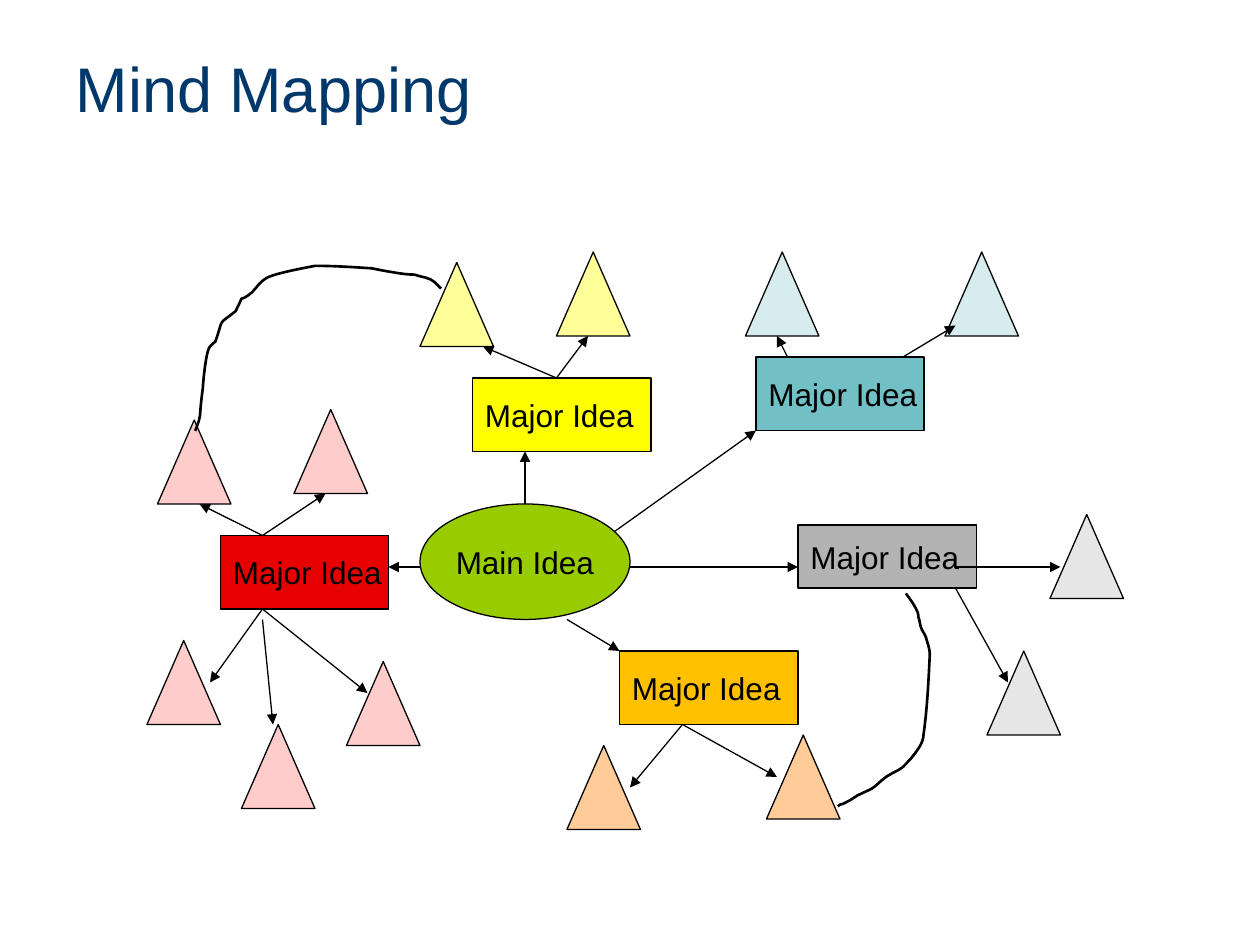
from lxml.etree import SubElement
from pptx import Presentation
from pptx.dml.color import RGBColor
from pptx.enum.shapes import MSO_CONNECTOR, MSO_SHAPE
from pptx.enum.text import MSO_ANCHOR, PP_ALIGN
from pptx.oxml.ns import qn
from pptx.util import Inches, Pt

NAVY = RGBColor(0x00, 0x38, 0x6B)
BLACK = RGBColor(0x00, 0x00, 0x00)
GREEN = RGBColor(0x99, 0xCC, 0x00)
TEAL, PALE_TEAL = RGBColor(0x72, 0xBF, 0xC5), RGBColor(0xD6, 0xEC, 0xEE)
GRAY, PALE_GRAY = RGBColor(0xB3, 0xB3, 0xB3), RGBColor(0xE6, 0xE6, 0xE6)
YELLOW, PALE_YELLOW = RGBColor(0xFF, 0xFF, 0x00), RGBColor(0xFF, 0xFF, 0x99)
RED, PINK = RGBColor(0xE6, 0x00, 0x00), RGBColor(0xFF, 0xCC, 0xCC)
ORANGE, PEACH = RGBColor(0xFF, 0xC0, 0x00), RGBColor(0xFF, 0xCC, 0x99)

# Content: each major idea with its triangles and arrows (from x, y, to x, y)
TITLE = "Mind Mapping"
MAIN_IDEA = ("Main Idea", (3.33, 4, 1.67, 0.92))
TRIANGLE_SIZE = (0.58, 0.67)
MAJOR_IDEAS = [
    {"text": "Major Idea", "area": (6, 2.83, 1.33, 0.58), "fill": TEAL, "pale": PALE_TEAL,
     "triangles": [(5.92, 2), (7.5, 2)],
     "from_main": (4.83, 4.25, 6, 3.42),
     "arrows": [(7.17, 2.83, 7.58, 2.57), (6.25, 2.83, 6.17, 2.67)]},
    {"text": "Major Idea", "area": (6.33, 4.17, 1.42, 0.5), "fill": GRAY, "pale": PALE_GRAY,
     "triangles": [(7.83, 5.17), (8.33, 4.08)],
     "from_main": (5, 4.5, 6.33, 4.5),
     "arrows": [(7.58, 4.5, 8.42, 4.5), (7.58, 4.67, 8, 5.42)]},
    {"text": "Major Idea", "area": (3.75, 3, 1.42, 0.58), "fill": YELLOW, "pale": PALE_YELLOW,
     "triangles": [(4.42, 2), (3.33, 2.08)],
     "from_main": (4.17, 4, 4.17, 3.58),
     "arrows": [(4.42, 3, 4.67, 2.67), (4.42, 3, 3.83, 2.75)]},
    {"text": "Major Idea", "area": (1.75, 4.25, 1.33, 0.58), "fill": RED, "pale": PINK,
     "triangles": [(2.75, 5.25), (1.92, 5.75), (2.33, 3.25), (1.25, 3.33), (1.17, 5.08)],
     "from_main": (3.33, 4.5, 3.08, 4.5),
     "arrows": [(2.08, 4.25, 1.58, 4), (2.08, 4.25, 2.58, 3.92), (2.08, 4.83, 1.67, 5.42),
                (2.08, 4.83, 2.92, 5.5), (2.08, 4.92, 2.17, 5.75)]},
    {"text": "Major Idea", "area": (4.92, 5.17, 1.42, 0.58), "fill": ORANGE, "pale": PEACH,
     "triangles": [(4.5, 5.92), (6.08, 5.83)],
     "from_main": (4.5, 4.92, 4.92, 5.17),
     "arrows": [(5.42, 5.75, 5, 6.25), (5.42, 5.75, 6.17, 6.17)]},
]

# Hand-drawn links: a start, then three points for each curve; a last single point is a line
LINKS = [
    [(7.19, 4.71),
     (7.22, 4.75), (7.25, 4.79), (7.27, 4.83), (7.28, 4.85), (7.29, 4.87), (7.29, 4.9),
     (7.3, 4.92), (7.3, 4.95), (7.31, 4.98), (7.32, 5.01), (7.34, 5.03), (7.35, 5.06),
     (7.36, 5.1), (7.38, 5.15), (7.38, 5.19), (7.37, 5.4), (7.36, 5.62), (7.33, 5.83),
     (7.33, 5.9), (7.27, 5.97), (7.23, 6.02), (7.2, 6.05), (7.18, 6.08), (7.15, 6.1),
     (7.12, 6.12), (7.09, 6.13), (7.06, 6.15), (7, 6.18), (6.96, 6.24), (6.9, 6.27),
     (6.87, 6.28), (6.84, 6.3), (6.81, 6.31), (6.79, 6.32), (6.77, 6.34), (6.75, 6.35),
     (6.73, 6.36), (6.71, 6.37), (6.69, 6.38), (6.67, 6.38), (6.66, 6.39), (6.65, 6.4)],
    [(1.55, 3.42),
     (1.61, 3.25), (1.57, 3.38), (1.61, 3.08), (1.61, 3.06), (1.63, 2.82), (1.66, 2.76),
     (1.67, 2.74), (1.69, 2.73), (1.71, 2.71), (1.78, 2.51), (1.72, 2.59), (1.87, 2.47),
     (1.96, 2.29), (1.87, 2.43), (2, 2.32), (2.04, 2.28), (2.06, 2.24), (2.11, 2.21),
     (2.17, 2.17), (2.45, 2.12), (2.5, 2.11), (2.65, 2.11), (2.8, 2.12), (2.95, 2.13),
     (3, 2.14), (3.05, 2.15), (3.11, 2.16), (3.17, 2.17), (3.23, 2.18), (3.29, 2.18),
     (3.34, 2.2), (3.41, 2.2), (3.45, 2.24), (3.5, 2.29)],
]


def on_grid(lengths):
    """Snap lengths to the twelfth-inch grid of the map."""
    return [Inches(round(length * 12) / 12) for length in lengths]


def write_text(shape, text, size=18, color=BLACK, align=PP_ALIGN.LEFT, wrap=False):
    frame = shape.text_frame
    frame.word_wrap = wrap
    frame.vertical_anchor = MSO_ANCHOR.MIDDLE
    para = frame.paragraphs[0]
    para.alignment = align
    span = para.add_run()
    span.text = text
    span.font.name = "Arial"
    span.font.size = Pt(size)
    span.font.color.rgb = color


def set_outline(shape, width=0.75):
    shape.line.color.rgb = BLACK
    shape.line.width = Pt(width)


def add_figure(page, kind, area, fill):
    figure = page.shapes.add_shape(kind, *on_grid(area))
    figure.shadow.inherit = False
    figure.fill.solid()
    figure.fill.fore_color.rgb = fill
    set_outline(figure)
    return figure


def add_arrow(page, ends):
    arrow = page.shapes.add_connector(MSO_CONNECTOR.STRAIGHT, *on_grid(ends))
    set_outline(arrow)
    SubElement(arrow.line._get_or_add_ln(), qn("a:tailEnd"), type="triangle")
    SubElement(arrow._element.spPr, qn("a:effectLst"))


def add_link(page, points):
    start, *others = [(Inches(x), Inches(y)) for x, y in points]
    builder = page.shapes.build_freeform(*start)
    builder.add_line_segments(others, close=False)
    link = builder.convert_to_shape()
    link.shadow.inherit = False
    link.fill.background()
    set_outline(link, width=1.5)

    # Join each three line points into one Bézier curve
    outline = next(link._element.iter(qn("a:path")))
    lines = outline.findall(qn("a:lnTo"))
    for index in range(0, len(lines), 3):
        group = lines[index:index + 3]
        if len(group) == 3:
            curve = SubElement(outline, qn("a:cubicBezTo"))
            for line in group:
                curve.append(line[0])
                outline.remove(line)
        else:
            outline.extend(group)


def main():
    deck = Presentation()
    deck.slide_width, deck.slide_height = Inches(10), Inches(7.5)
    page = deck.slides.add_slide(deck.slide_layouts[5])

    # Title
    title = page.shapes.title
    title.left, title.top, title.width, title.height = map(Inches, (0.5, 0.3, 9, 0.78))
    write_text(title, TITLE, size=36, color=NAVY, wrap=True)

    # Major ideas, then their triangles
    for idea in MAJOR_IDEAS:
        box = add_figure(page, MSO_SHAPE.RECTANGLE, idea["area"], idea["fill"])
        write_text(box, idea["text"])
    for idea in MAJOR_IDEAS:
        for corner in idea["triangles"]:
            add_figure(page, MSO_SHAPE.ISOSCELES_TRIANGLE, corner + TRIANGLE_SIZE, idea["pale"])

    # Main idea, in front of its own arrows
    for idea in MAJOR_IDEAS:
        add_arrow(page, idea["from_main"])
    text, area = MAIN_IDEA
    write_text(add_figure(page, MSO_SHAPE.OVAL, area, GREEN), text, align=PP_ALIGN.CENTER)

    # Arrows to the triangles, then the links
    for idea in MAJOR_IDEAS:
        for ends in idea["arrows"]:
            add_arrow(page, ends)
    for points in LINKS:
        add_link(page, points)

    deck.save("out.pptx")


if __name__ == "__main__":
    main()
